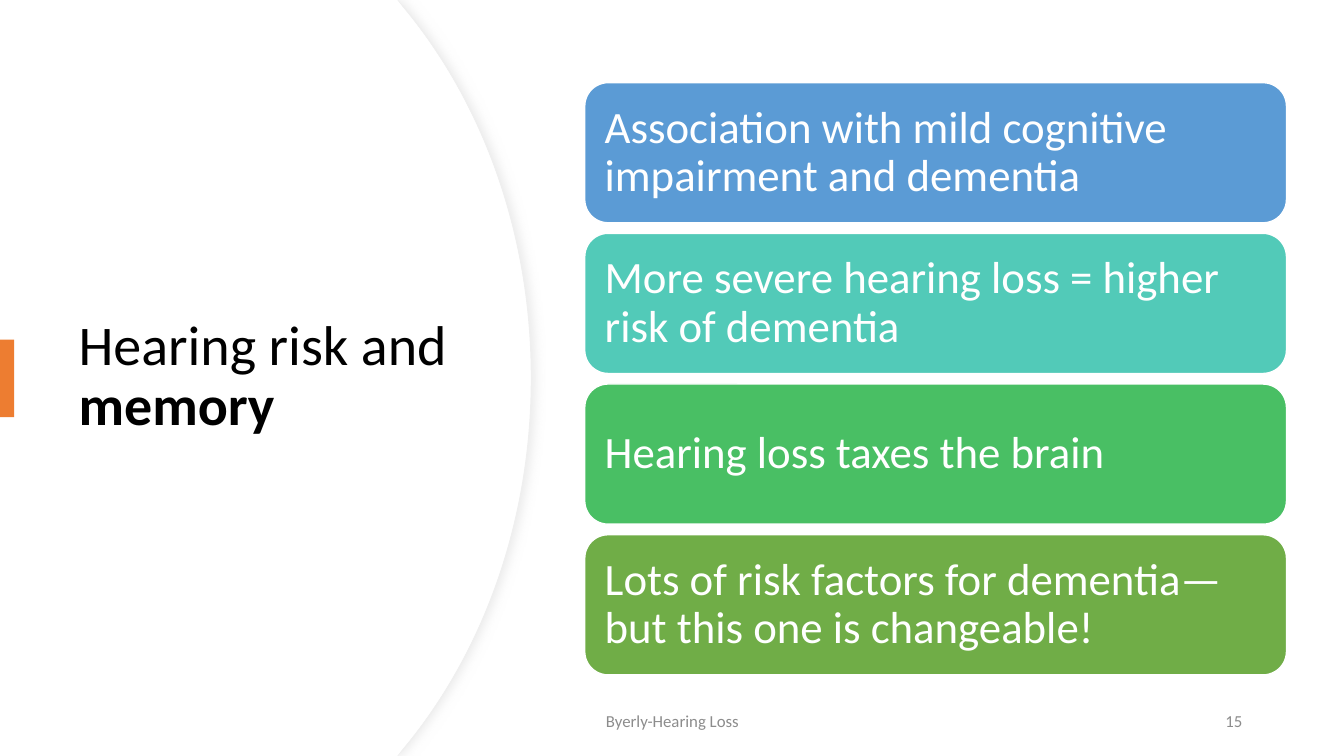
from lxml import etree
from pptx import Presentation
from pptx.dml.color import RGBColor
from pptx.enum.shapes import MSO_SHAPE
from pptx.enum.text import MSO_ANCHOR, PP_ALIGN
from pptx.util import Inches, Pt

RECT, ROUND = MSO_SHAPE.RECTANGLE, MSO_SHAPE.ROUNDED_RECTANGLE
MIDDLE = MSO_ANCHOR.MIDDLE
LEFT, CENTER, RIGHT = PP_ALIGN.LEFT, PP_ALIGN.CENTER, PP_ALIGN.RIGHT
DRAW = "{http://schemas.openxmlformats.org/drawingml/2006/main}"


def paint(shape, fill, line=None, width=1):
    shape.shadow.inherit = False
    shape.fill.solid()
    shape.fill.fore_color.rgb = RGBColor.from_string(fill)
    if line:
        shape.line.color.rgb = RGBColor.from_string(line)
        shape.line.width = Pt(width)
    else:
        shape.line.fill.background()


def style(shape, size, color, align):
    frame = shape.text_frame
    frame.word_wrap = True
    frame.vertical_anchor = MIDDLE
    para = frame.paragraphs[0]
    para.alignment = align
    for run in para.runs:
        run.font.name = "Calibri"
        run.font.size = Pt(size)
        run.font.color.rgb = RGBColor.from_string(color)
    return para


deck = Presentation()
deck.slide_width, deck.slide_height = Inches(13.33), Inches(7.5)
slide = deck.slides.add_slide(deck.slide_layouts[5])
shapes = slide.shapes

# Curved white panels: the upper half of the arc, then its mirror
for edge, line in ((5.27, "EFEFEF"), (5.26, None)):
    upper = [(3.94, 0), (edge - 1.26, 0.08), (edge - 0.48, 1.02), (edge, 2.32)]
    lower = [(x, 7.5 - y) for x, y in reversed(upper)]
    outline = upper + [(edge, 3.75)] + lower + [(0, 7.5)]
    pen = shapes.build_freeform(0, 0)
    pen.add_line_segments([(Inches(x), Inches(y)) for x, y in outline], close=True)
    panel = pen.convert_to_shape()
    paint(panel, "FFFFFF", line, 0.75)

    # Turn each run of three points into one Bezier curve
    legs = list(panel._element.iter(DRAW + "lnTo"))
    for first in (2, 5):
        curve = etree.Element(DRAW + "cubicBezTo")
        legs[first].addprevious(curve)
        for leg in legs[first:first + 3]:
            curve.append(leg[0])
            leg.getparent().remove(leg)

    if line:
        effects = panel._element.spPr.find(DRAW + "effectLst")
        shade = etree.SubElement(effects, DRAW + "outerShdw", blurRad=str(Pt(7)),
                                 dist=str(Pt(3)), dir="0", algn="l",
                                 rotWithShape="0")
        tint = etree.SubElement(shade, DRAW + "srgbClr", val="D9D9D9")
        etree.SubElement(tint, DRAW + "alpha", val="50000")

# Title, lifted above the panels
title = shapes.title
title.left, title.top = Inches(0.68), Inches(1.27)
title.width, title.height = Inches(3.94), Inches(4.95)
head = title.text_frame.paragraphs[0]
head.add_run().text = "Hearing risk and "
word = head.add_run()
word.text = "memory"
word.font.bold = True
style(title, 40, "000000", LEFT).line_spacing = 0.9
title._element.getparent().append(title._element)

accent = shapes.add_shape(RECT, 0, Inches(3.37), Inches(0.14), Inches(0.77))
paint(accent, "ED7D31")

cards = (
    ("Association with mild cognitive impairment and dementia", "5B9BD5"),
    ("More severe hearing loss = higher risk of dementia", "52CAB8"),
    ("Hearing loss taxes the brain", "49BF64"),
    ("Lots of risk factors for dementia—but this one is changeable!", "70AD47"),
)
for row, (text, fill) in enumerate(cards):
    card = shapes.add_shape(ROUND, Inches(5.8), Inches(0.82 + row * 1.495),
                            Inches(6.96), Inches(1.39))
    paint(card, fill, "FFFFFF")
    frame = card.text_frame
    frame.text = text
    frame.margin_left = frame.margin_right = Inches(0.13)
    frame.margin_top = frame.margin_bottom = Inches(0.13)
    style(card, 32, "FFFFFF", LEFT).line_spacing = 0.9

for left, width, text, align in ((4.42, 4.5, "Byerly-Hearing Loss", CENTER),
                                 (9.42, 3, "15", RIGHT)):
    foot = shapes.add_textbox(Inches(left), Inches(6.95), Inches(width), Inches(0.4))
    foot.text_frame.text = text
    style(foot, 12, "8C8C8C", align)

deck.save("out.pptx")
